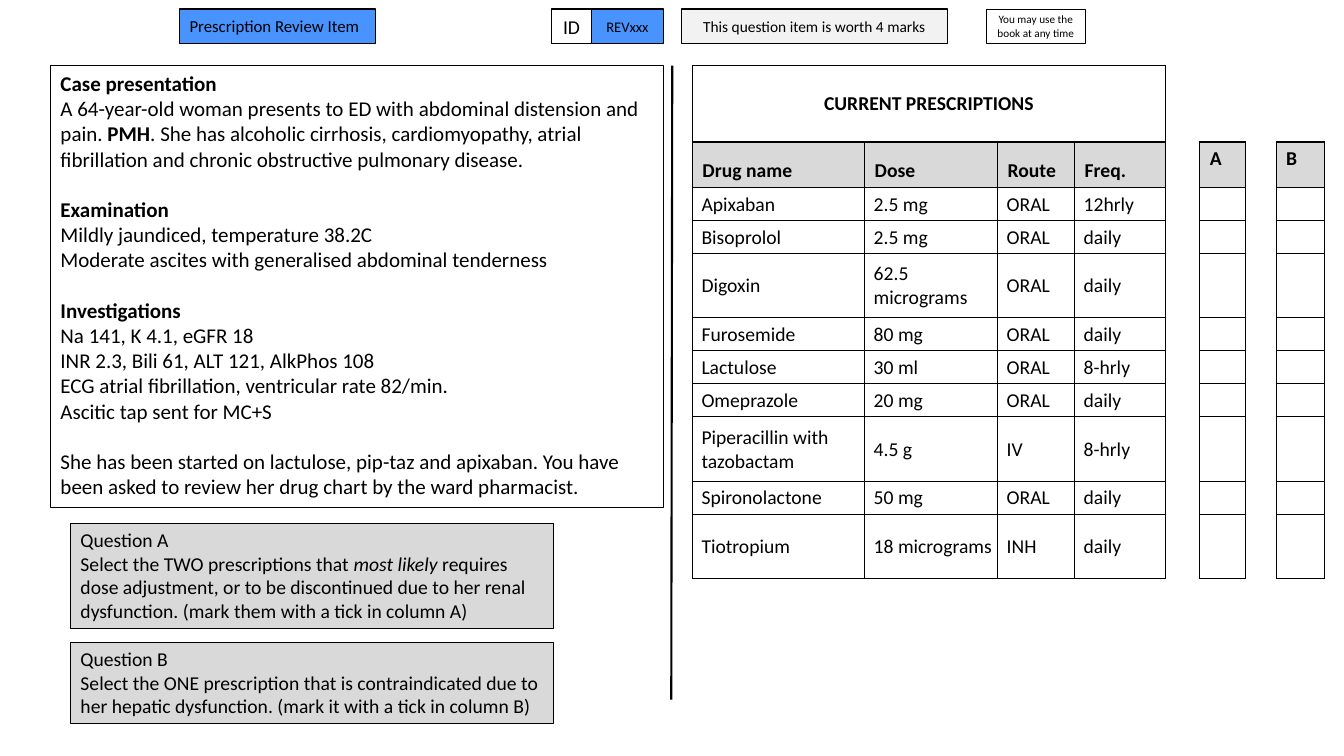
from dataclasses import dataclass

from lxml import etree
from pptx import Presentation
from pptx.dml.color import RGBColor
from pptx.enum.shapes import MSO_CONNECTOR, MSO_SHAPE
from pptx.enum.text import MSO_ANCHOR, MSO_AUTO_SIZE, PP_ALIGN
from pptx.oxml.ns import qn
from pptx.util import Pt

RECT = MSO_SHAPE.RECTANGLE
LINE = MSO_CONNECTOR.STRAIGHT
TOP, MID, LOW = MSO_ANCHOR.TOP, MSO_ANCHOR.MIDDLE, MSO_ANCHOR.BOTTOM
LEFT, CENTER = PP_ALIGN.LEFT, PP_ALIGN.CENTER
FIXED = MSO_AUTO_SIZE.NONE


@dataclass(frozen=True)
class Theme:
    font: str = "Calibri"
    ink: RGBColor = RGBColor(0, 0, 0)
    blue: RGBColor = RGBColor(0x49, 0x93, 0xFF)
    pale: RGBColor = RGBColor(0xF2, 0xF2, 0xF2)
    gray: RGBColor = RGBColor(0xD9, 0xD9, 0xD9)
    title: float = 12
    code: float = 10.5
    marks: float = 11
    hint: float = 8
    case: float = 15
    text: float = 14


THEME = Theme()
BOLD = {"bold": True}
ITALIC = {"italic": True}

CASE = [
    (0, [("Case presentation", BOLD)]),
    (0, [("A 64-year-old woman presents to ED with abdominal distension and pain. ", {}),
         ("PMH", BOLD),
         (". She has alcoholic cirrhosis, cardiomyopathy, atrial fibrillation "
          "and chronic obstructive pulmonary disease.", {})]),
    (18, [("Examination", BOLD)]),
    (0, [("Mildly jaundiced, temperature 38.2C", {})]),
    (0, [("Moderate ascites with generalised abdominal tenderness", {})]),
    (18, [("Investigations", BOLD)]),
    (0, [("Na 141, K 4.1, eGFR 18", {})]),
    (0, [("INR 2.3, Bili 61, ALT 121, AlkPhos 108", {})]),
    (0, [("ECG atrial fibrillation, ventricular rate 82/min.", {})]),
    (0, [("Ascitic tap sent for MC+S", {})]),
    (18, [("She has been started on lactulose, pip-taz and apixaban. You have "
           "been asked to review her drug chart by the ward pharmacist.", {})]),
]
ASK_A = [
    (0, [("Question A", {})]),
    (0, [("Select the TWO prescriptions that ", {}), ("most likely ", ITALIC),
         ("requires dose adjustment, or to be discontinued due to her renal "
          "dysfunction. (mark them with a tick in column A)", {})]),
]
ASK_B = [
    (0, [("Question B", {})]),
    (0, [("Select the ONE prescription that is contraindicated due to her "
          "hepatic dysfunction. (mark it with a tick in column B)", {})]),
]
HEADS = ["Drug name", "Dose", "Route", "Freq.", "", "A", "", "B"]
DRUGS = [
    ("Apixaban", "2.5 mg", "ORAL", "12hrly"),
    ("Bisoprolol", "2.5 mg", "ORAL", "daily"),
    ("Digoxin", "62.5 micrograms", "ORAL", "daily"),
    ("Furosemide", "80 mg", "ORAL", "daily"),
    ("Lactulose", "30 ml", "ORAL", "8-hrly"),
    ("Omeprazole", "20 mg", "ORAL", "daily"),
    ("Piperacillin with tazobactam", "4.5 g", "IV", "8-hrly"),
    ("Spironolactone", "50 mg", "ORAL", "daily"),
    ("Tiotropium", "18 micrograms", "INH", "daily"),
]
TALL = {"Digoxin", "Piperacillin with tazobactam", "Tiotropium"}
COLS = [123, 95, 55, 65, 24.5, 32.5, 22, 34.5]
TICKS = (5, 7)
SIDES = {"a:lnL": (0, -1), "a:lnR": (0, 1), "a:lnT": (-1, 0), "a:lnB": (1, 0)}


def apply(item, values):
    for name, value in values.items():
        setattr(item, name, value)


def write(frame, paras, size, align=LEFT):
    for i, (gap, runs) in enumerate(paras):
        para = frame.add_paragraph() if i else frame.paragraphs[0]
        apply(para, {"alignment": align, "space_before": Pt(gap)})
        for text, style in runs:
            run = para.add_run()
            run.text = text
            apply(run.font, {"name": THEME.font, "size": Pt(size),
                             "bold": False, "italic": False, **style})
            run.font.color.rgb = THEME.ink


def dress(shape, place, paras, size, fill=None, width=1, align=LEFT, anchor=MID):
    apply(shape, dict(zip(("left", "top", "width", "height"), map(Pt, place))))
    shape.shadow.inherit = False
    if fill is None:
        shape.fill.background()
    else:
        shape.fill.solid()
        shape.fill.fore_color.rgb = fill
    shape.line.color.rgb = THEME.ink
    shape.line.width = Pt(width)
    frame = shape.text_frame
    apply(frame, {"word_wrap": True, "auto_size": FIXED, "vertical_anchor": anchor,
                  "margin_left": Pt(7.2), "margin_right": Pt(7.2),
                  "margin_top": Pt(3.6), "margin_bottom": Pt(3.6)})
    write(frame, paras, size, align)


def box(slide, place, *args, **style):
    shape = slide.shapes.add_shape(RECT, *map(Pt, place))
    dress(shape, place, *args, **style)


def plain(text):
    return [(0, [(text, {})])]


def unlist(shape):
    for para in shape.text_frame.paragraphs:
        props = para._p.get_or_add_pPr()
        props.set("marL", "0")
        props.set("indent", "0")
        etree.SubElement(props, qn("a:buNone"))


def boxed(row, col):
    return 0 <= col < 4 or (row > 0 and col in TICKS)


def edge(cell, row, col):
    props = cell._tc.get_or_add_tcPr()
    for i, (tag, (down, right)) in enumerate(SIDES.items()):
        line = etree.Element(qn(tag), w=str(Pt(1)))
        if boxed(row, col) or boxed(row + down, col + right):
            fill = etree.SubElement(line, qn("a:solidFill"))
            etree.SubElement(fill, qn("a:srgbClr"), val=str(THEME.ink))
        else:
            etree.SubElement(line, qn("a:noFill"))
        props.insert(i, line)


def fill_cell(cell, row, col, text):
    if row == 1 and text:
        cell.fill.solid()
        cell.fill.fore_color.rgb = THEME.gray
    else:
        cell.fill.background()
    if row > 1:
        apply(cell, {"margin_left": Pt(6.5), "margin_right": Pt(0.7),
                     "margin_top": Pt(0.7), "margin_bottom": Pt(0)})
    low = LOW if col < 4 else TOP
    cell.vertical_anchor = low if row == 1 else MID
    if text:
        style = BOLD if row < 2 else {}
        write(cell.text_frame, [(0, [(text, style)])], THEME.text,
              CENTER if row == 0 else LEFT)
    edge(cell, row, col)


def chart(slide):
    rows = [["CURRENT PRESCRIPTIONS"] + [""] * 7, HEADS]
    rows += [[*drug, "", "", "", ""] for drug in DRUGS]
    highs = [54.7, 32.4] + [46 if drug[0] in TALL else 23.6 for drug in DRUGS]
    place = (494.6, 46.8, sum(COLS), sum(highs))
    table = slide.shapes.add_table(len(rows), len(COLS), *map(Pt, place)).table
    apply(table, {"first_row": False, "horz_banding": False})
    for col, width in zip(table.columns, COLS):
        col.width = Pt(width)
    for row, high in zip(table.rows, highs):
        row.height = Pt(high)
    table.cell(0, 0).merge(table.cell(0, 3))
    for r, row in enumerate(rows):
        for c, text in enumerate(row):
            fill_cell(table.cell(r, c), r, c, text)


def divide(slide):
    line = slide.shapes.add_connector(LINE, Pt(480.2), Pt(46.8), Pt(479.5), Pt(499.7))
    line.line.color.rgb = THEME.ink
    line.line.width = Pt(1.5)
    etree.SubElement(line._element.spPr, qn("a:effectLst"))


def main():
    deck = Presentation()
    apply(deck, {"slide_width": Pt(960), "slide_height": Pt(540)})
    slide = deck.slides.add_slide(deck.slide_layouts[1])
    title, body = slide.placeholders
    top, high = 6.5, 24.5
    dress(title, (128.2, top, 140, high), plain("Prescription Review Item"),
          THEME.title, THEME.blue)
    tags = [
        (422.6, 51.2, "REVxxx", THEME.code, THEME.blue, 1),
        (394, 28.5, "ID", THEME.text, None, 1),
        (486.7, 190, "This question item is worth 4 marks", THEME.marks, THEME.pale, 1),
        (704.2, 71.3, "You may use the book at any time", THEME.hint, None, 0.25),
    ]
    for left, wide, text, size, fill, width in tags:
        box(slide, (left, top, wide, high), plain(text), size, fill, width, CENTER)
    chart(slide)
    dress(body, (36, 46.8, 437.8, 316), CASE, THEME.case, width=0.75, anchor=TOP)
    unlist(body)
    for y, tall, paras in ((373.7, 75, ASK_A), (458.6, 58.3, ASK_B)):
        box(slide, (50.4, y, 345, tall), paras, THEME.text, THEME.gray, 0.75, anchor=TOP)
    divide(slide)
    deck.save("out.pptx")


if __name__ == "__main__":
    main()
